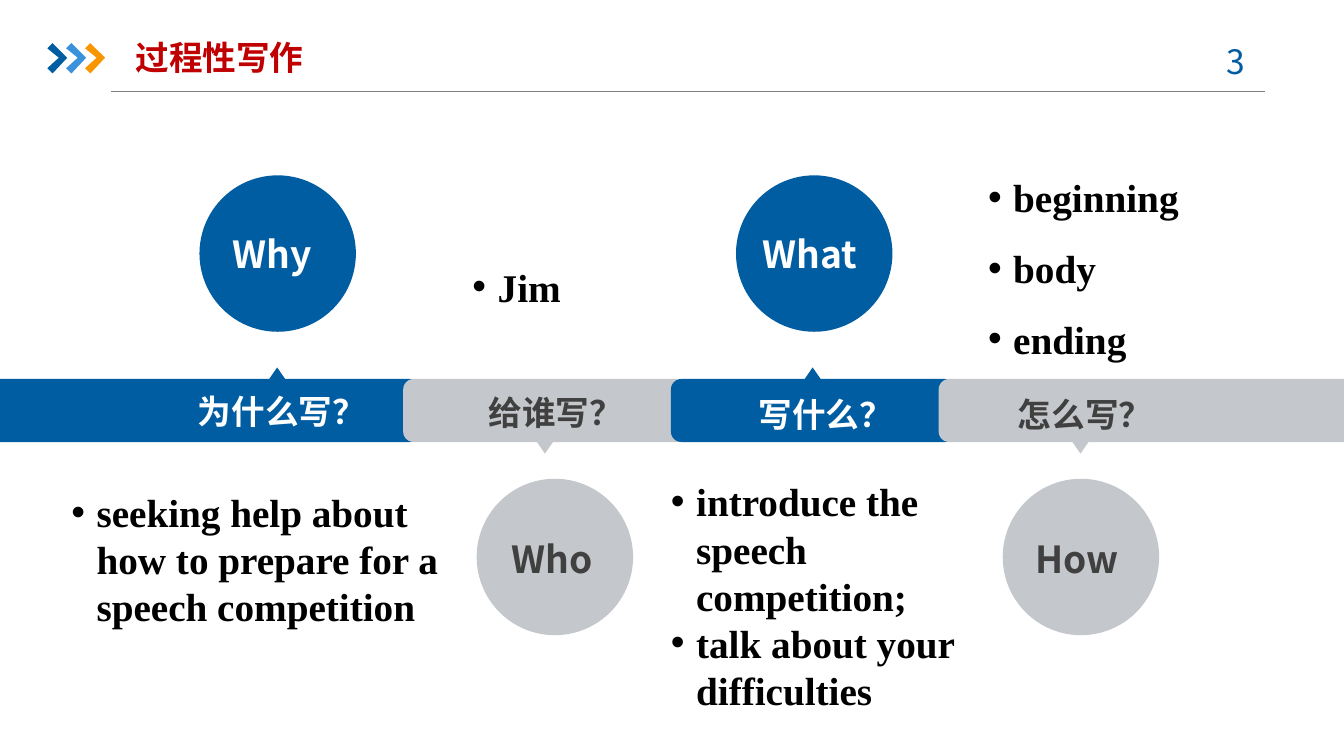
"""Build the process writing slide: why, who, what and how along one band."""
import pptx
import pptx.dml.color
import pptx.enum.shapes
import pptx.enum.text
import pptx.oxml.ns
import pptx.util
from lxml import etree

PX = 9525
BLUE, GREY, WHITE, DARK = "005DA2", "C4C7CB", "FFFFFF", "404040"
SANS, SERIF = "Noto Sans CJK SC", "Times New Roman"
SHAPE = pptx.enum.shapes.MSO_SHAPE
ALIGN = pptx.enum.text.PP_ALIGN
qn = pptx.oxml.ns.qn

prs = pptx.Presentation()
prs.slide_width, prs.slide_height = 1280 * PX, 720 * PX
s = prs.slides.add_slide(prs.slide_layouts[6])


def paint(sp, color):
    sp.shadow.inherit = False
    sp.fill.solid()
    sp.fill.fore_color.rgb = pptx.dml.color.RGBColor.from_string(color)
    sp.line.fill.background()


def add_text(box, text, size, color, font=SANS, align=ALIGN.CENTER, bold=True, bullet=False, spacing=1.0):
    tf = s.shapes.add_textbox(*[v * PX for v in box]).text_frame
    tf.word_wrap = True
    tf.margin_left = tf.margin_right = tf.margin_top = tf.margin_bottom = 0
    tf.text = text
    for p in tf.paragraphs:
        p.alignment = align
        p.line_spacing = spacing
        if bullet:
            pPr = p._p.get_or_add_pPr()
            pPr.set("marL", str(24 * PX))
            pPr.set("indent", str(-24 * PX))
            etree.SubElement(pPr, qn("a:buFont")).set("typeface", "Arial")
            etree.SubElement(pPr, qn("a:buChar")).set("char", "•")
        for r in p.runs:
            r.font.size = pptx.util.Pt(size)
            r.font.bold = bold
            r.font.name = font
            r.font.color.rgb = pptx.dml.color.RGBColor.from_string(color)
            etree.SubElement(r._r.get_or_add_rPr(), qn("a:ea")).set("typeface", font)
    return tf


rule = s.shapes.add_connector(pptx.enum.shapes.MSO_CONNECTOR.STRAIGHT, 106 * PX, 87 * PX, 1205 * PX, 87 * PX)
rule.line.color.rgb = pptx.dml.color.RGBColor.from_string("808080")
rule.line.width = pptx.util.Pt(0.75)
etree.SubElement(rule._element.spPr, qn("a:effectLst"))

for i, color in enumerate([BLUE, "3992DB", "F79600"]):
    x, y = 45 + 18 * i, 41
    fb = s.shapes.build_freeform(x, y + 5, scale=PX)
    fb.add_line_segments([(x + dx, y + dy) for dx, dy in [(5, 0), (19, 14), (5, 29), (0, 24), (11, 14)]])
    paint(fb.convert_to_shape(), color)

title = add_text((129, 28, 592, 53), "过程性写作", 24, "C00000", align=ALIGN.LEFT)
title.vertical_anchor = pptx.enum.text.MSO_ANCHOR.MIDDLE
add_text((1134, 39, 94, 38), "3 ", 24, BLUE, bold=False)

columns = [
    (-15, 416, "为什么写？", (185, 372), 190, "Why ", (217, 92)),
    (384, 271, "给谁写？", (446, 373), 454, "Who", (481, 90)),
    (639, 271, "写什么？", (703, 375), 701, "What ", (722, 107)),
    (894, 401, "怎么写？", (950, 375), 955, "How ", (983, 93)),
]
for i, (left, width, question, label, circle_x, word, (word_x, word_w)) in enumerate(columns):
    up = i % 2 == 0
    fill, ink = (BLUE, WHITE) if up else (GREY, DARK)
    circle_y = 167 if up else 456
    pointer = s.shapes.add_shape(SHAPE.ISOSCELES_TRIANGLE, 255 * (i + 1) * PX, (350 if up else 419) * PX, 18 * PX, 13 * PX)
    pointer.rotation = 0 if up else 180
    bar = s.shapes.add_shape(SHAPE.ROUNDED_RECTANGLE, left * PX, 361 * PX, width * PX, 60 * PX)
    circle = s.shapes.add_shape(SHAPE.OVAL, circle_x * PX, circle_y * PX, 149 * PX, 149 * PX)
    for sp in (pointer, bar, circle):
        paint(sp, fill)
    add_text((*label, 167, 38), question, 24, ink)
    add_text((word_x, circle_y + (53 if up else 55), word_w, 43), word, 26.6, ink)

answers = [
    ((68, 465, 352, 135), "seeking help about how to prepare for a speech competition", ALIGN.LEFT, 1.0),
    ((450, 228, 294, 60), "Jim", ALIGN.JUSTIFY, 1.5),
    ((639, 455, 285, 227), "introduce the speech competition;\ntalk about your difficulties", ALIGN.LEFT, 1.0),
    ((941, 143, 225, 196), "beginning\nbody\nending", ALIGN.JUSTIFY, 1.5),
]
for box, text, align, spacing in answers:
    add_text(box, text, 28, "000000", SERIF, align, bullet=True, spacing=spacing)

prs.save("out.pptx")
